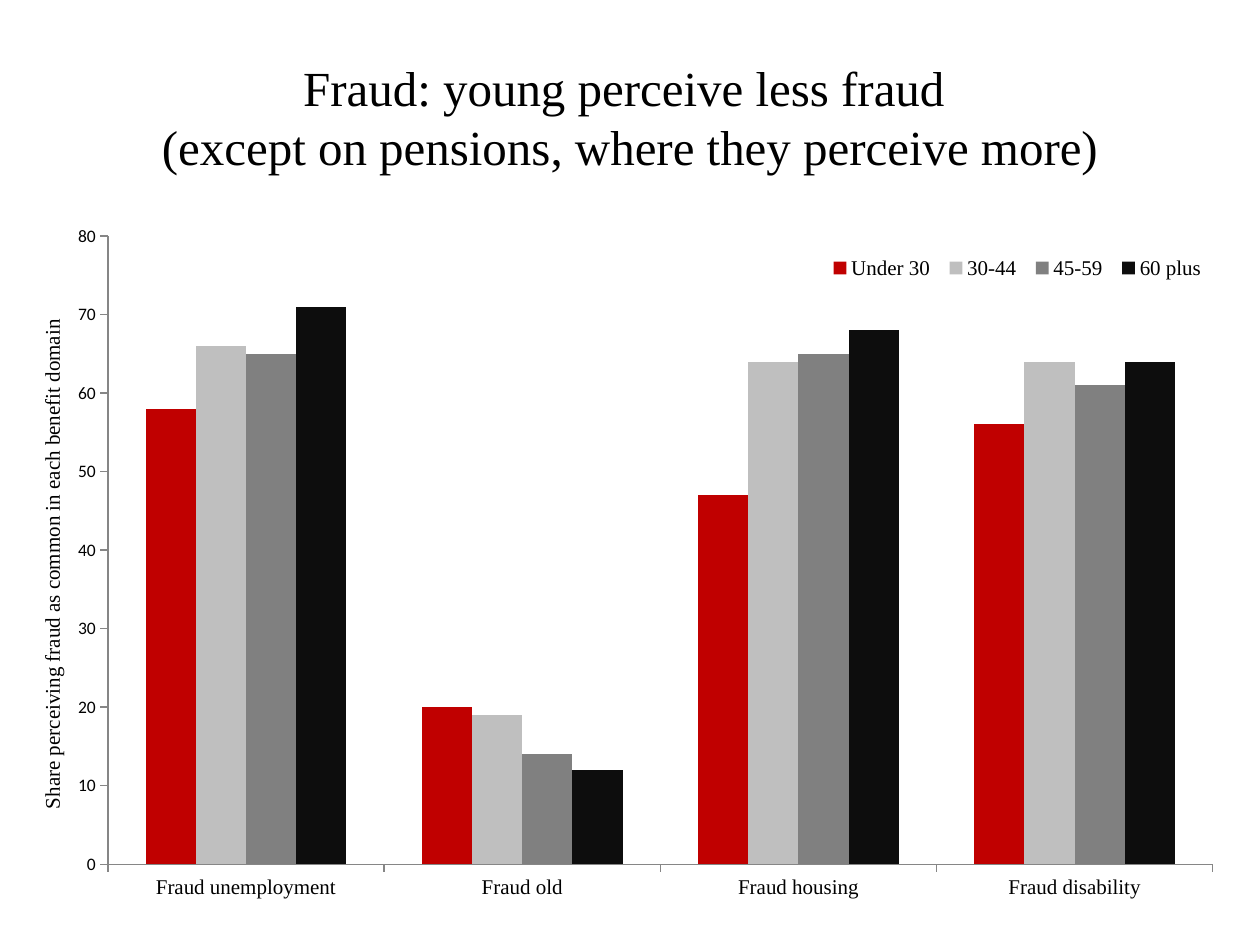
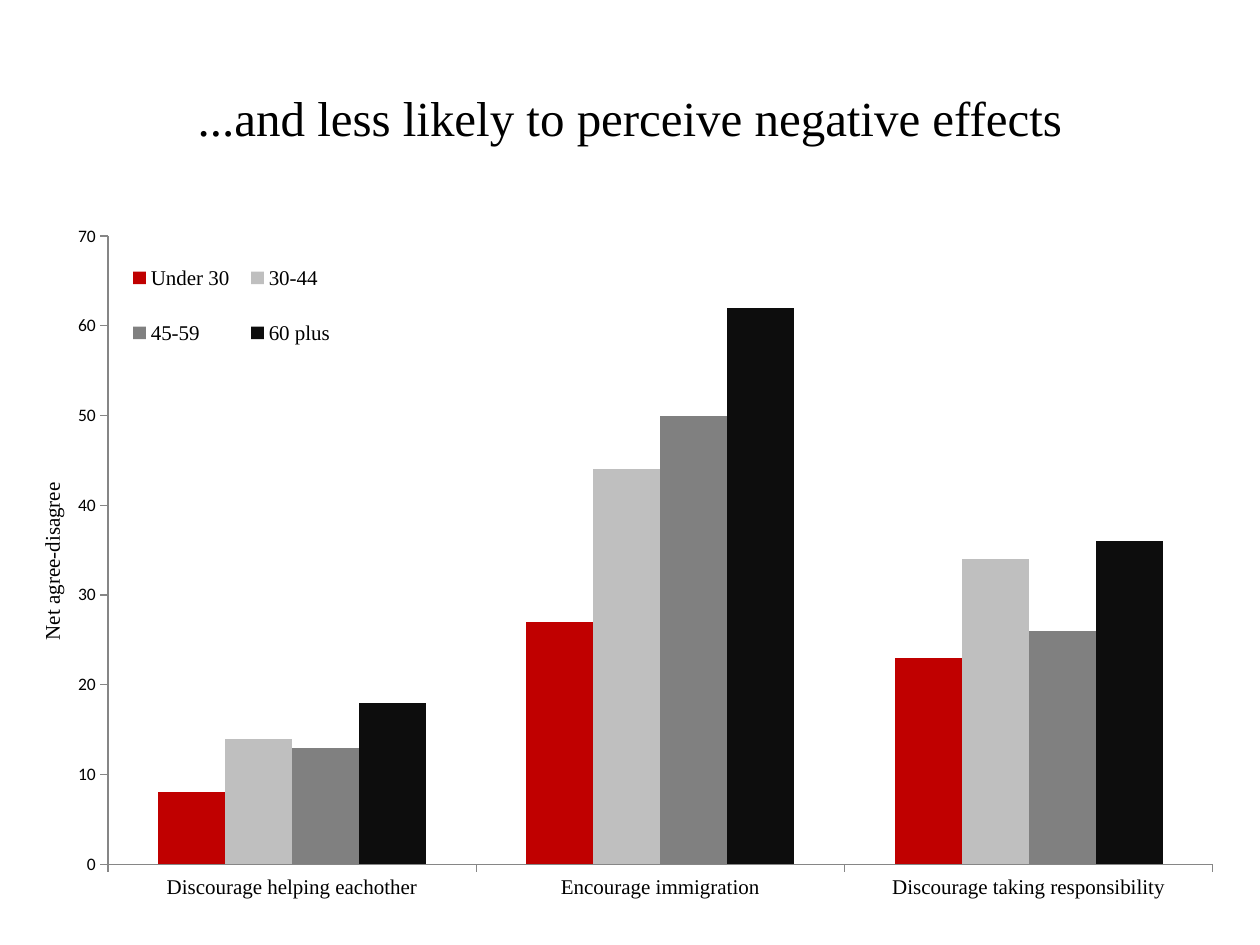
"""Two slides of clustered column charts comparing age groups."""
from lxml import etree
from pptx import Presentation
from pptx.chart.data import CategoryChartData
from pptx.dml.color import RGBColor
from pptx.enum.chart import XL_CHART_TYPE, XL_LEGEND_POSITION, XL_TICK_MARK
from pptx.enum.text import MSO_ANCHOR, PP_ALIGN
from pptx.oxml.ns import qn
from pptx.util import Inches, Pt

COLUMN = XL_CHART_TYPE.COLUMN_CLUSTERED
RIGHT = XL_LEGEND_POSITION.RIGHT
OUTSIDE, NO_TICK = XL_TICK_MARK.OUTSIDE, XL_TICK_MARK.NONE
MIDDLE, CENTER = MSO_ANCHOR.MIDDLE, PP_ALIGN.CENTER

BLACK = RGBColor(0x00, 0x00, 0x00)
AXIS_GRAY = RGBColor(0x86, 0x86, 0x86)
AGE_COLORS = {
    "Under 30": RGBColor(0xC0, 0x00, 0x00),
    "30-44": RGBColor(0xBF, 0xBF, 0xBF),
    "45-59": RGBColor(0x80, 0x80, 0x80),
    "60 plus": RGBColor(0x0D, 0x0D, 0x0D),
}
SERIF, SANS = "Times New Roman", "Calibri"

SLIDES = [
    dict(
        title="Fraud: young perceive less fraud \v(except on pensions, where they perceive more)",
        axis="Share perceiving fraud as common in each benefit domain",
        axis_top=0.14,
        top_value=80,
        legend=(0.66, 0.04, 0.33, 0.06),
        categories=["Fraud unemployment", "Fraud old", "Fraud housing", "Fraud disability"],
        values=[(58, 20, 47, 56), (66, 19, 64, 64), (65, 14, 65, 61), (71, 12, 68, 64)],
    ),
    dict(
        title="...and less likely to perceive negative effects",
        axis="Net agree-disagree",
        axis_top=0.38,
        top_value=70,
        legend=(0.07, 0.02, 0.19, 0.21),
        categories=["Discourage helping eachother", "Encourage immigration",
                    "Discourage taking responsibility"],
        values=[(8, 27, 23), (14, 44, 34), (13, 50, 26), (18, 62, 36)],
    ),
]


def set_font(font, name, size):
    font.name, font.size, font.bold = name, Pt(size), False
    font.color.rgb = BLACK


def place(element, index, box, inner=False):
    for old in element.findall(qn("c:layout")):
        element.remove(old)
    layout = etree.Element(qn("c:layout"))
    manual = etree.SubElement(layout, qn("c:manualLayout"))
    settings = [("layoutTarget", "inner")] if inner else []
    settings += [("xMode", "edge"), ("yMode", "edge"), *zip("xywh", box)]
    for tag, value in settings:
        etree.SubElement(manual, qn(f"c:{tag}")).set("val", str(value))
    element.insert(index, layout)


prs = Presentation()
prs.slide_width, prs.slide_height = Inches(10), Inches(7.5)

for page in SLIDES:
    s = prs.slides.add_slide(prs.slide_layouts[5])
    title = s.shapes.title
    title.left, title.top = Inches(0.5), Inches(0.3)
    title.width, title.height = Inches(9), Inches(1.25)
    tf = title.text_frame
    tf.text = page["title"]
    tf.vertical_anchor = MIDDLE
    p = tf.paragraphs[0]
    p.alignment = CENTER
    for r in p.runs:
        set_font(r.font, SERIF, 28)

    data = CategoryChartData()
    data.categories = page["categories"]
    for age, values in zip(AGE_COLORS, page["values"]):
        data.add_series(age, values)
    chart = s.shapes.add_chart(COLUMN, Inches(0.28), Inches(1.75),
                               Inches(9.45), Inches(5.39), data).chart
    set_font(chart.font, SANS, 10)
    chart.has_title = False
    plot = chart.plots[0]
    plot.gap_width, plot.overlap = 150, 0
    plot.vary_by_categories = False
    for series, color in zip(plot.series, AGE_COLORS.values()):
        series.format.fill.solid()
        series.format.fill.fore_color.rgb = color
    place(plot._element.getparent(), 0, (0.061, 0.023, 0.928, 0.925), inner=True)

    for axis in (chart.category_axis, chart.value_axis):
        axis.has_major_gridlines = False
        axis.major_tick_mark, axis.minor_tick_mark = OUTSIDE, NO_TICK
        axis.format.line.color.rgb = AXIS_GRAY
    set_font(chart.category_axis.tick_labels.font, SERIF, 12)
    set_font(chart.value_axis.tick_labels.font, SANS, 10)
    chart.value_axis.minimum_scale = 0
    chart.value_axis.maximum_scale = page["top_value"]
    chart.value_axis.major_unit = 10

    axis_title = chart.value_axis.axis_title
    axis_title.text_frame.text = page["axis"]
    set_font(axis_title.text_frame.paragraphs[0].runs[0].font, SERIF, 12)
    place(axis_title._element, 1, (0, page["axis_top"]))

    chart.has_legend = True
    legend = chart.legend
    legend.position = RIGHT
    legend.include_in_layout = False
    set_font(legend.font, SERIF, 12)
    place(legend._element, 1, page["legend"])

prs.save("out.pptx")
